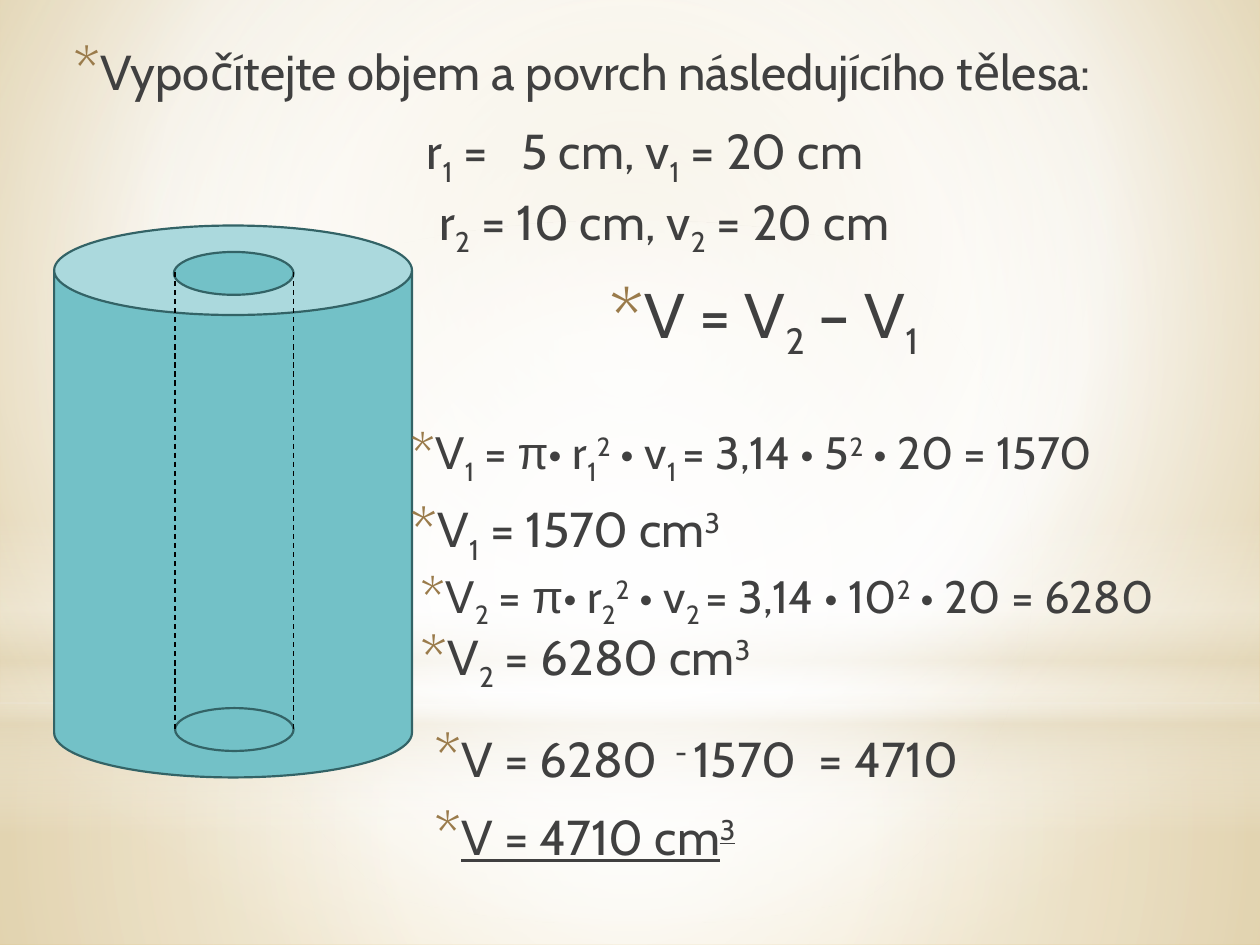
"""Build a slide that works out the volume of a hollow cylinder."""
from lxml.etree import SubElement as Sub
from pptx import Presentation
from pptx.dml.color import RGBColor as Rgb
from pptx.enum.dml import MSO_LINE as Dash
from pptx.enum.shapes import MSO_CONNECTOR as Link, MSO_SHAPE as Kind
from pptx.oxml.ns import qn
from pptx.oxml.xmlchemy import OxmlElement as Node
from pptx.util import Inches, Pt

THEME = {
    "font": "Cabin", "greek": "Arial",
    "ink": "404040", "mark": "9A7B4B", "body": "73C1C7", "edge": "336366", "dash": "000000",
    "white": "FFFFFF", "sand": "E4D9BE", "tan": "E5D5AC", "gold": "DABD77",
    "text": 28, "big": 36, "small": 25.9, "outline": 1.25, "thin": 0.75,
}
BASE = {"_": -25000, "^": 30000}
MID = (50, 50, 50, 50)

BACK = ([(0, "tan", 100), (60, "white", 100), (100, "gold", 100)], (20, 10, 20, 60))
LAYERS = [
    (Kind.RECTANGLE, (0, 5.58, 10, 1.92),
     [(0, "white", 91), (37, "white", 76), (100, "sand", 79)], MID),
    (Kind.RECTANGLE, (0, 0, 10, 5.58),
     [(0, "white", 89), (48, "white", 62), (100, "sand", 79)], MID),
    (Kind.RECTANGLE, (0, 4.12, 10, 2.5),
     [(0, "white", 0), (29, "white", 30), (45, "sand", 40),
      (55, "white", 26), (65, "sand", 60), (100, "white", 0)], None),
    (Kind.OVAL, (0, 1.75, 10, 5.58), [(0, "white", 100), (56, "white", 0)], MID),
]

TASK = ((0.43, 0.28, 9.29, 0.87), "Vypočítejte objem a povrch následujícího tělesa:")
LINES = [
    ((3.24, 0.91, 6.16, 0.87), "text", False, "r|_1| =   5 cm, v|_1| = 20 cm"),
    ((3.34, 1.47, 6.16, 0.87), "text", False, "r|_2| = 10 cm, v|_2| = 20 cm"),
    ((4.69, 2.14, 3.39, 0.87), "big", True, "V = V|_2| – V|_1"),
    ((3.11, 3.32, 6.89, 0.87), "small", True,
     "V|_1| = |π|• r|_1|^2| • v|_1 |= 3,14 • 5|^2| • 20 = 1570"),
    ((3.11, 3.91, 6.16, 0.87), "text", True, "V|_1| = 1570 cm|^3"),
    ((3.19, 4.46, 6.89, 0.87), "small", True,
     "V|_2| = |π|• r|_2|^2| • v|_2 |= 3,14 • 10|^2| • 20 = 6280"),
    ((3.19, 4.92, 6.16, 0.87), "text", True, "V|_2| = 6280 cm|^3"),
    ((3.3, 5.73, 6.16, 0.87), "text", True, "V = 6280 |^ - |1570  = 4710"),
]
RESULT = ((3.3, 6.35, 6.16, 0.87), "V = 4710 cm|^3")

SOLID = [
    (Kind.CAN, (0.43, 1.79, 2.84, 4.38)),
    (Kind.OVAL, (1.38, 2, 0.95, 0.34)),
    (Kind.OVAL, (1.39, 5.62, 0.94, 0.34)),
]
BORE = {"xs": (1.39, 2.33), "top": 2.16, "foot": 5.79}


def color(key):
    return Rgb.from_string(THEME[key])


def span(box):
    return [Inches(n) for n in box]


def shade(fill, root, stops, focus):
    fill.solid()
    old = next(root.iter(qn("a:solidFill")))
    grad = Node("a:gradFill")
    grad.set("rotWithShape", "1")
    group = Sub(grad, qn("a:gsLst"))
    for pos, key, alpha in stops:
        stop = Sub(group, qn("a:gs"), pos=str(pos * 1000))
        tint = Sub(stop, qn("a:srgbClr"), val=THEME[key])
        if alpha < 100:
            Sub(tint, qn("a:alpha"), val=str(alpha * 1000))
    if focus:
        way = Sub(grad, qn("a:path"), path="circle")
        Sub(way, qn("a:fillToRect"), **{k: str(n * 1000) for k, n in zip("ltrb", focus)})
    else:
        Sub(grad, qn("a:lin"), ang="5400000", scaled="0")
    old.getparent().replace(old, grad)


def write(frame, text, size="text", star=True, under=None):
    frame.word_wrap = True
    para = frame.paragraphs[0]
    para.space_before, para.space_after = Pt(THEME[size] * 0.2), Pt(3)
    props = para._p.get_or_add_pPr()
    left, hang = (0.25, -0.2) if star else (0.05, 0)
    props.set("marL", str(Inches(left)))
    props.set("indent", str(Inches(hang)))
    if star:
        Sub(Sub(props, qn("a:buClr")), qn("a:srgbClr"), val=THEME["mark"])
        Sub(props, qn("a:buSzPct"), val="130000")
        Sub(props, qn("a:buFont"), typeface=THEME["font"])
        Sub(props, qn("a:buChar"), char="*")
    else:
        Sub(props, qn("a:buNone"))
    font = para.font
    font.name, font.size, font.underline = THEME["font"], Pt(THEME[size]), under
    font.color.rgb = color("ink")
    for part in text.split("|"):
        run = para.add_run()
        shift = BASE.get(part[0])
        run.text = part[1:] if shift else part
        if shift:
            run._r.get_or_add_rPr().set("baseline", str(shift))
        if part == "π":
            run.font.name = THEME["greek"]


def main():
    deck = Presentation()
    deck.slide_width, deck.slide_height = Inches(10), Inches(7.5)
    slide = deck.slides.add_slide(deck.slide_layouts[1])
    shapes = slide.shapes
    title, body = shapes.title, slide.placeholders[1]
    tree = title.element.getparent()
    tree.remove(title.element)

    shade(slide.background.fill, slide.element, *BACK)
    for kind, box, stops, focus in LAYERS:
        layer = shapes.add_shape(kind, *span(box))
        layer.shadow.inherit = False
        shade(layer.fill, layer.element, stops, focus)
        layer.line.fill.background()

    box, text = TASK
    body.left, body.top, body.width, body.height = span(box)
    tree.append(body.element)
    write(body.text_frame, text)

    tube = shapes.add_group_shape().shapes
    for kind, box in SOLID:
        part = tube.add_shape(kind, *span(box))
        part.shadow.inherit = False
        part.fill.solid()
        part.fill.fore_color.rgb = color("body")
        part.line.color.rgb = color("edge")
        part.line.width = Pt(THEME["outline"])
    for x in BORE["xs"]:
        side = tube.add_connector(Link.STRAIGHT, *span((x, BORE["top"], x, BORE["foot"])))
        side.line.color.rgb = color("dash")
        side.line.width = Pt(THEME["thin"])
        side.line.dash_style = Dash.DASH
        Sub(side.element.spPr, qn("a:effectLst"))

    for box, size, star, text in LINES:
        write(shapes.add_textbox(*span(box)).text_frame, text, size, star)
    box, text = RESULT
    write(shapes.add_textbox(*span(box)).text_frame, text, under=True)
    deck.save("out.pptx")


if __name__ == "__main__":
    main()
